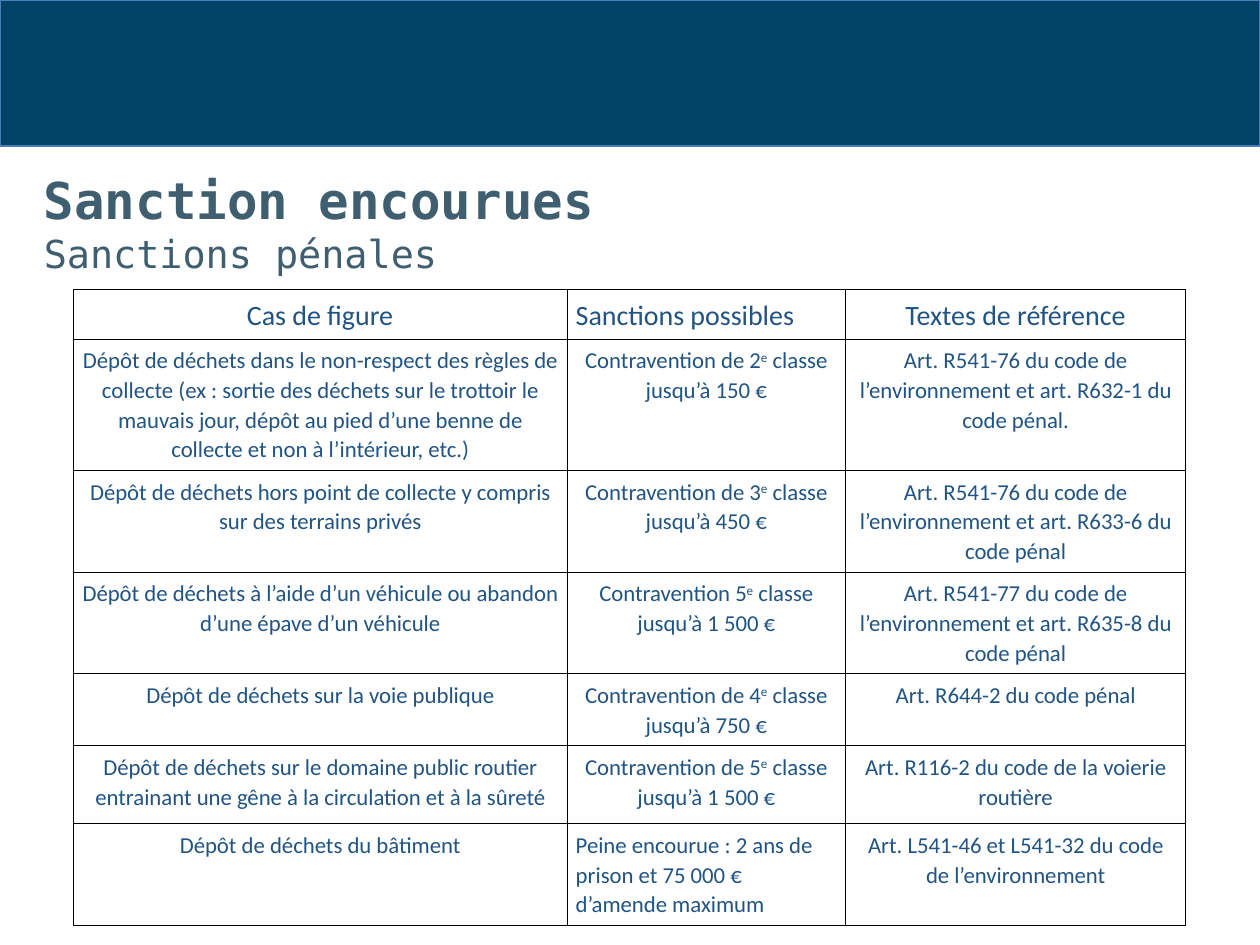
from lxml.etree import SubElement as Sub
from pptx import Presentation
from pptx.dml.color import RGBColor as Rgb
from pptx.enum.shapes import MSO_SHAPE as Shape
from pptx.enum.text import MSO_AUTO_SIZE as Auto, PP_ALIGN as Align
from pptx.oxml.ns import qn
from pptx.util import Pt

HUES = {"band": "004366", "edge": "4A7EBB", "title": "3F5F71",
        "text": "215483", "rule": "000000"}


def add_run(para, text, hue, **style):
    run = para.add_run()
    run.text = text
    run.font.color.rgb = Rgb.from_string(HUES[hue])
    for key, value in style.items():
        setattr(run.font, key, value)
    return run


def add_rules(cell):
    """Draw the four borders of a cell; call before setting its fill."""
    props = cell._tc.get_or_add_tcPr()
    for side in ("lnL", "lnR", "lnT", "lnB"):
        line = Sub(props, qn(f"a:{side}"), w=str(Pt(0.5)))
        fill = Sub(line, qn("a:solidFill"))
        Sub(fill, qn("a:srgbClr"), val=HUES["rule"])


deck = Presentation()
deck.slide_width, deck.slide_height = Pt(720), Pt(540)
slide = deck.slides.add_slide(deck.slide_layouts[6])

# Top band
band = slide.shapes.add_shape(Shape.RECTANGLE, 0, 0, Pt(720), Pt(83.5))
band.shadow.inherit = False
band.fill.solid()
band.fill.fore_color.rgb = Rgb.from_string(HUES["band"])
band.line.color.rgb = Rgb.from_string(HUES["edge"])
band.line.width = Pt(0.75)

# Sanctions table; "^e" marks a raised ordinal
heads = ("Cas de figure", "Sanctions possibles", "Textes de référence")
cases = (
    ("Dépôt de déchets dans le non-respect des règles de collecte "
     "(ex : sortie des déchets sur le trottoir le mauvais jour, dépôt au pied "
     "d’une benne de collecte et non à l’intérieur, etc.)",
     "Contravention de 2^e classe jusqu’à 150 €",
     "Art. R541-76 du code de l’environnement et art. R632-1 du code pénal."),
    ("Dépôt de déchets hors point de collecte y compris sur des terrains privés",
     "Contravention de 3^e classe jusqu’à 450 €",
     "Art. R541-76 du code de l’environnement et art. R633-6 du code pénal"),
    ("Dépôt de déchets à l’aide d’un véhicule ou abandon d’une épave d’un véhicule",
     "Contravention 5^e classe jusqu’à 1 500 €",
     "Art. R541-77 du code de l’environnement et art. R635-8 du code pénal"),
    ("Dépôt de déchets sur la voie publique",
     "Contravention de 4^e classe jusqu’à 750 €",
     "Art. R644-2 du code pénal"),
    ("Dépôt de déchets sur le domaine public routier entrainant une gêne "
     "à la circulation et à la sûreté",
     "Contravention de 5^e classe jusqu’à 1 500 €",
     "Art. R116-2 du code de la voierie routière"),
    ("Dépôt de déchets du bâtiment",
     "Peine encourue : 2 ans de prison et 75 000 € d’amende maximum",
     "Art. L541-46 et L541-32 du code de l’environnement"),
)
rows = (heads, *cases)
widths = (282.2, 159.1, 194.5)
heights = (21, 65.5, 49, 49, 32.4, 44.6, 49)
margins = {"margin_left": 5, "margin_right": 5,
           "margin_top": 3.6, "margin_bottom": 3.6}
left_cells = {(0, 1), (6, 1)}

table = slide.shapes.add_table(len(rows), len(heads), Pt(41.8), Pt(165.6),
                               Pt(sum(widths)), Pt(sum(heights))).table
table.first_row = table.horz_banding = False
for col, width in zip(table.columns, widths):
    col.width = Pt(width)
for row, height in zip(table.rows, heights):
    row.height = Pt(height)

for r, texts in enumerate(rows):
    for c, text in enumerate(texts):
        cell = table.cell(r, c)
        add_rules(cell)
        cell.fill.background()
        for key, value in margins.items():
            setattr(cell, key, Pt(value))
        para = cell.text_frame.paragraphs[0]
        para.alignment = Align.LEFT if (r, c) in left_cells else Align.CENTER
        para.line_spacing = 1.07
        style = {"name": "Calibri", "size": Pt(13 if r else 16)}
        start, mark, rest = text.partition("^e")
        add_run(para, start, "text", **style)
        if mark:
            raised = add_run(para, "e", "text", **style)
            raised._r.get_or_add_rPr().set("baseline", "30000")
            add_run(para, rest, "text", **style)

# Title and subtitle
box = slide.shapes.add_textbox(Pt(18), Pt(93), Pt(701), Pt(67.7))
frame = box.text_frame
frame.word_wrap = True
frame.auto_size = Auto.SHAPE_TO_FIT_TEXT
mono = "DejaVu Sans Mono"
add_run(frame.paragraphs[0], "Sanction encourues", "title",
        name=mono, size=Pt(29), bold=True)
add_run(frame.add_paragraph(), "Sanctions pénales", "title",
        name=mono, size=Pt(22), bold=False)

deck.save("out.pptx")
